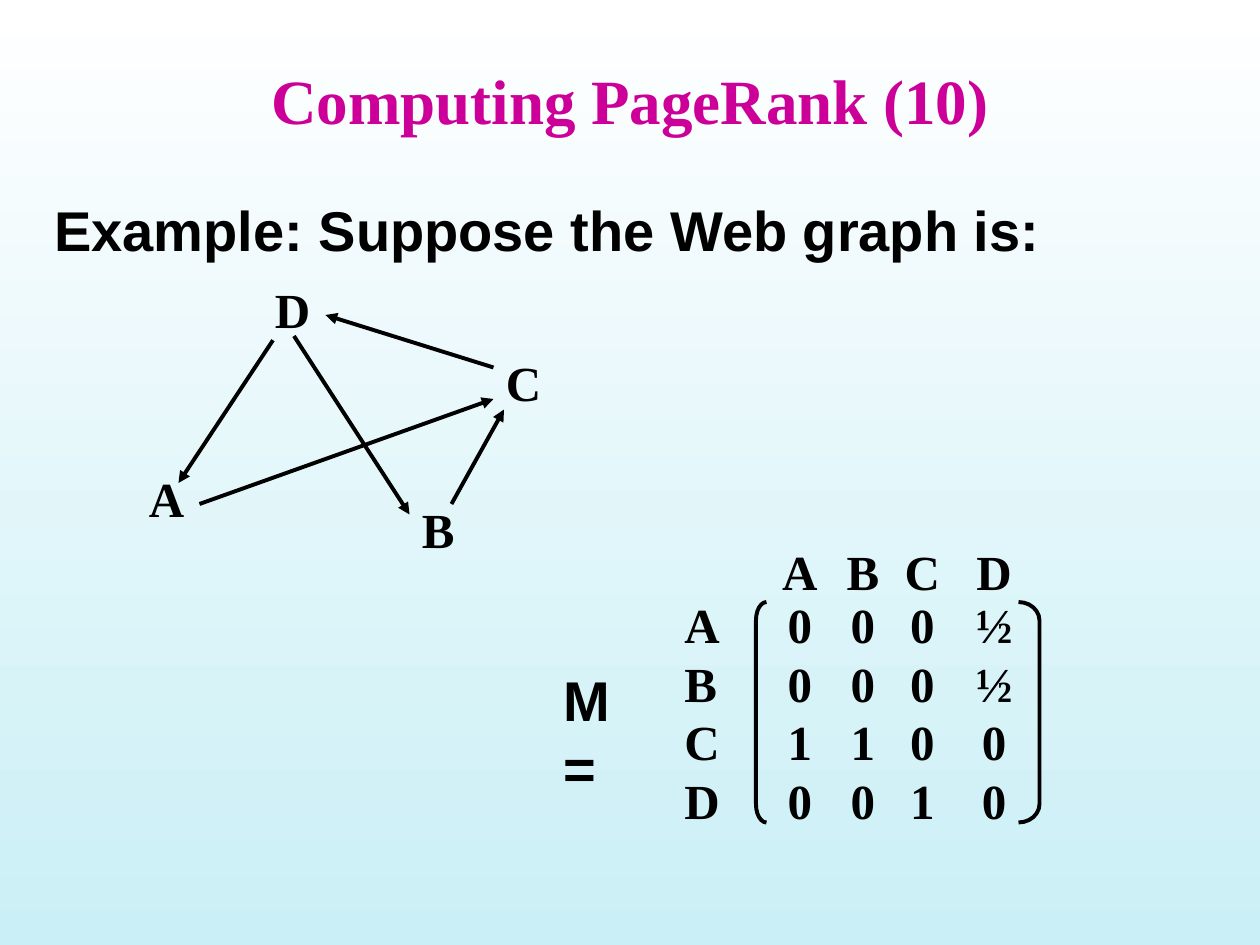
from dataclasses import dataclass

from lxml.etree import SubElement
from pptx import Presentation
from pptx.dml.color import RGBColor
from pptx.enum.shapes import MSO_CONNECTOR, MSO_SHAPE as Shape
from pptx.enum.text import MSO_ANCHOR as Anchor, PP_ALIGN as Align
from pptx.oxml.ns import qn
from pptx.util import Pt


@dataclass(frozen=True)
class Theme:
    title_color = RGBColor(0xCC, 0x00, 0x99)
    ink = RGBColor(0x00, 0x00, 0x00)
    sky_top = RGBColor(0xFF, 0xFF, 0xFF)
    sky_bottom = RGBColor(0xCA, 0xEF, 0xF6)
    serif = "Times New Roman"
    sans = "Arial"
    title_size = Pt(36)
    body_size = Pt(32)
    label_size = Pt(28)
    stroke = Pt(2.25)


theme = Theme()


def add_text(box, lines, size=theme.label_size, font=theme.serif,
             color=theme.ink, align=Align.LEFT, tabs=()):
    """Add bold lines in a box (left, top, width, height); tabs are (position, kind) pairs."""
    frame = slide.shapes.add_textbox(*map(Pt, box)).text_frame
    frame.word_wrap = True
    frame.text = "\n".join(lines)
    for paragraph in frame.paragraphs:
        paragraph.alignment = align
        if tabs:
            stops = SubElement(paragraph._p.get_or_add_pPr(), qn("a:tabLst"))
            for position, kind in tabs:
                SubElement(stops, qn("a:tab"), pos=str(Pt(position)), algn=kind)
        for run in paragraph.runs:
            run.font.name = font
            run.font.size = size
            run.font.bold = True
            run.font.color.rgb = color
    return frame


def style_stroke(line):
    line.color.rgb = theme.ink
    line.width = theme.stroke


prs = Presentation()
prs.slide_width, prs.slide_height = Pt(720), Pt(540)
slide = prs.slides.add_slide(prs.slide_layouts[6])

sky = slide.background.fill
sky.gradient()
sky.gradient_angle = 270
for stop, color in zip(sky.gradient_stops, (theme.sky_top, theme.sky_bottom)):
    stop.color.rgb = color

title = add_text((54, 30, 612, 54), ["Computing PageRank (10)"],
                 theme.title_size, color=theme.title_color, align=Align.CENTER)
title.vertical_anchor = Anchor.MIDDLE
add_text((24, 108, 678, 46), ["Example: Suppose the Web graph is:"],
         theme.body_size, theme.sans)

# Web graph
pages = {"A": (78, 264), "B": (234, 282), "C": (282, 198), "D": (150, 156)}
for page, (left, top) in pages.items():
    add_text((left, top, 35, 41), [page])

links = [
    ((168, 192), (234, 294)),  # D to B
    ((282, 210), (186, 180)),  # C to D
    ((114, 288), (282, 228)),  # A to C
    ((156, 194.4), (102, 276)),  # D to A
    ((258, 288), (288, 234)),  # B to C
]
for start, end in links:
    link = slide.shapes.add_connector(MSO_CONNECTOR.STRAIGHT, *map(Pt, start + end))
    style_stroke(link.line)
    SubElement(link.line._get_or_add_ln(), qn("a:tailEnd"), type="triangle")
    SubElement(link._element.spPr, qn("a:effectLst"))

# Transition matrix
add_text((315, 377, 76, 46), ["M\t="], theme.body_size, theme.sans, tabs=[(45, "l")])

matrix = ["000½", "000½", "1100", "0010"]
columns = [(center, "ctr") for center in (12, 48, 82, 123)]
for top, height, rows in ((306, 41, ["ABCD"]), (336, 142, matrix)):
    add_text((438, top, 160, height), ["\t" + "\t".join(row) for row in rows], tabs=columns)
add_text((384, 336, 35, 142), list(pages))

for kind, left, width, curve in ((Shape.LEFT_BRACKET, 432, 6, 1.75),
                                 (Shape.RIGHT_BRACKET, 582, 12, 0.88)):
    bracket = slide.shapes.add_shape(kind, Pt(left), Pt(344), Pt(width), Pt(126))
    bracket.adjustments[0] = curve
    bracket.shadow.inherit = False
    bracket.fill.background()
    style_stroke(bracket.line)

prs.save("out.pptx")
